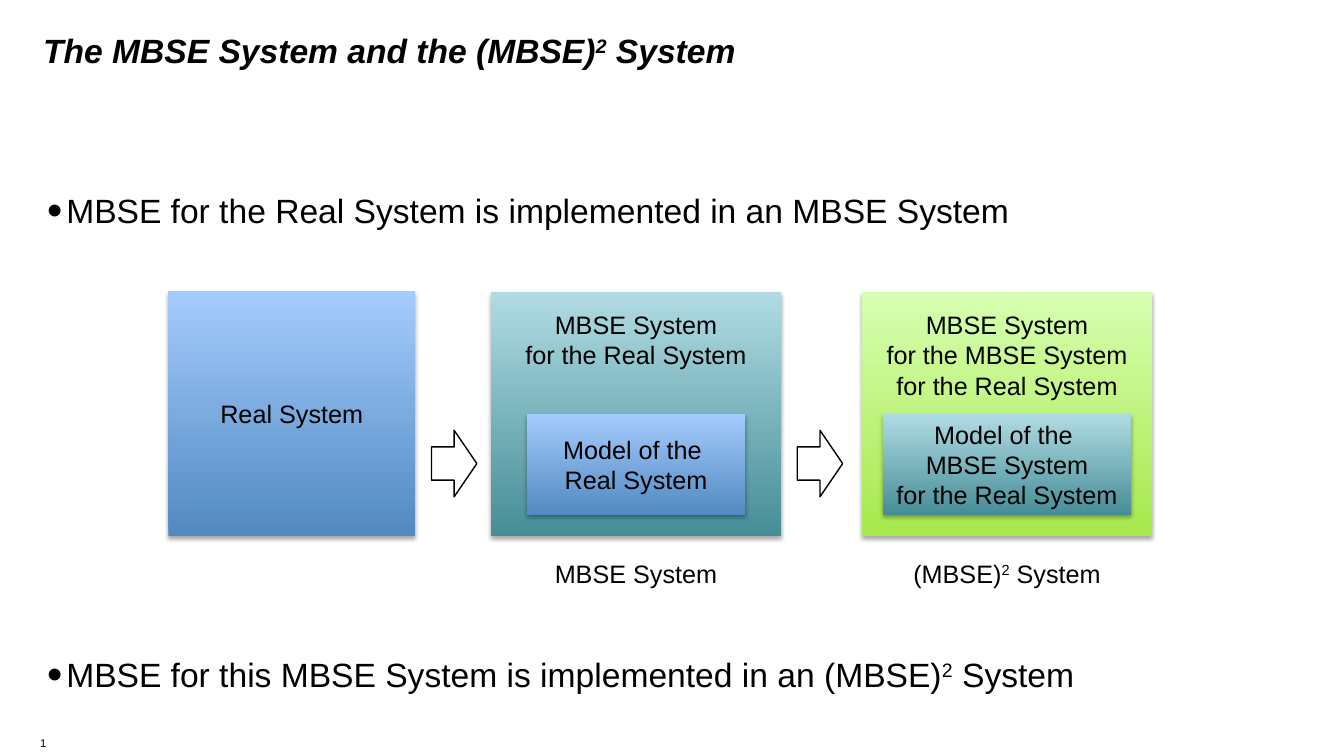
from dataclasses import dataclass

from lxml import etree
from pptx import Presentation
from pptx.dml.color import RGBColor
from pptx.enum.shapes import MSO_SHAPE
from pptx.enum.text import MSO_ANCHOR, PP_ALIGN
from pptx.oxml import parse_xml
from pptx.oxml.ns import nsdecls, qn
from pptx.shapes.autoshape import Shape
from pptx.slide import Slide
from pptx.text.text import TextFrame, _Paragraph
from pptx.util import Pt

RECTANGLE, RIGHT_ARROW = MSO_SHAPE.RECTANGLE, MSO_SHAPE.RIGHT_ARROW
TOP, MIDDLE = MSO_ANCHOR.TOP, MSO_ANCHOR.MIDDLE
LEFT, CENTER = PP_ALIGN.LEFT, PP_ALIGN.CENTER

FONT = "Arial"
COLORS = {
    "black": "000000",
    "white": "FFFFFF",
    "blue dark": "518AC1",
    "blue light": "A5CBFD",
    "teal dark": "468D97",
    "teal light": "B0DBE3",
    "green dark": "A7E84C",
    "green light": "D7FFB1",
}
BOX_BOTTOM = 383
MODEL_TOP, MODEL_HEIGHT = 295.9, 72
ARROW_TOP, ARROW_WIDTH, ARROW_HEIGHT = 307.4, 32.4, 47.5
LABEL_TOP, LABEL_HEIGHT = 395.3, 28.8
HEADING_INSET = 12.2
BULLET_INDENT = 13.7


@dataclass
class SystemBox:
    left: float
    top: float
    width: float
    color: str
    lines: list[str]
    model_width: float = 0
    model_color: str = ""
    model_lines: tuple[str, ...] = ()
    label: str = ""

    @property
    def center(self) -> float:
        return self.left + self.width / 2


SYSTEMS = [
    SystemBox(120.2, 208.1, 176.4, "blue", ["Real System"]),
    SystemBox(350.6, 208.8, 207.4, "teal", ["MBSE System", "for the Real System"],
              156.2, "blue", ("Model of the ", "Real System"), "MBSE System"),
    SystemBox(615.6, 208.8, 207.4, "green",
              ["MBSE System", "for the MBSE System for the Real System"],
              177.1, "teal", ("Model of the ", "MBSE System", "for the Real System"),
              "(MBSE)² System"),
]
ARROW_LEFTS = [308.2, 569.5]
BULLETS = [
    (132, "MBSE for the Real System is implemented in an MBSE System"),
    (463.7, "MBSE for this MBSE System is implemented in an (MBSE)² System"),
]


def color(name: str) -> RGBColor:
    return RGBColor.from_string(COLORS[name])


def write(paragraph: _Paragraph, text: str, size: float, alignment: PP_ALIGN) -> None:
    """Fill a paragraph, setting ² as a raised 2."""
    paragraph.alignment = alignment
    paragraph.font.name = FONT
    paragraph.font.size = Pt(size)
    paragraph.font.color.rgb = color("black")
    before, square, after = text.partition("²")
    paragraph.add_run().text = before
    if square:
        raised = paragraph.add_run()
        raised.text = "2"
        raised._r.get_or_add_rPr().set("baseline", "30000")
        paragraph.add_run().text = after


def write_lines(frame: TextFrame, lines: list[str] | tuple[str, ...], size: float) -> None:
    for index, line in enumerate(lines):
        paragraph = frame.add_paragraph() if index else frame.paragraphs[0]
        write(paragraph, line, size, CENTER)


def add_text_box(slide: Slide, left: float, top: float, width: float,
                 height: float) -> _Paragraph:
    """Add a wrapping text box and return its first paragraph."""
    frame = slide.shapes.add_textbox(Pt(left), Pt(top), Pt(width), Pt(height)).text_frame
    frame.word_wrap = True
    frame.vertical_anchor = TOP
    return frame.paragraphs[0]


def add_bullet(slide: Slide, top: float, text: str) -> None:
    paragraph = add_text_box(slide, 26.6, top, 887.8, 40)
    properties = paragraph._p.get_or_add_pPr()
    properties.set("marL", str(Pt(BULLET_INDENT)))
    properties.set("indent", str(-Pt(BULLET_INDENT)))
    etree.SubElement(properties, qn("a:buSzPct"), val="130000")
    etree.SubElement(properties, qn("a:buFont"), typeface=FONT)
    etree.SubElement(properties, qn("a:buChar"), char="•")
    write(paragraph, text, 24, LEFT)


def add_slide_number(slide: Slide) -> None:
    paragraph = add_text_box(slide, 21.6, 522.7, 72.7, 17.3)
    paragraph._p.append(parse_xml(
        f'<a:fld {nsdecls("a")} id="{{B6F15528-21DE-4FAA-801E-634DDDAF4B2B}}" type="slidenum">'
        f'<a:rPr lang="en-US" sz="800"><a:latin typeface="{FONT}"/></a:rPr>'
        f'<a:t>4</a:t></a:fld>'))


def add_shadow(shape: Shape) -> None:
    effects = shape._element.spPr.find(qn("a:effectLst"))
    shadow = etree.SubElement(effects, qn("a:outerShdw"), blurRad="40000", dist="23000",
                              dir="5400000", rotWithShape="0")
    shade = etree.SubElement(shadow, qn("a:srgbClr"), val=COLORS["black"])
    etree.SubElement(shade, qn("a:alpha"), val="35000")


def add_box(slide: Slide, left: float, top: float, width: float, height: float,
            hue: str, lines: list[str] | tuple[str, ...]) -> Shape:
    """Add a shaded box, dark at the bottom, with centred text."""
    shape = slide.shapes.add_shape(RECTANGLE, Pt(left), Pt(top), Pt(width), Pt(height))
    shape.fill.gradient()
    shape.fill.gradient_angle = 90
    for stop, tone in zip(shape.fill.gradient_stops, ("dark", "light")):
        stop.color.rgb = color(f"{hue} {tone}")
    shape.line.fill.background()
    shape.shadow.inherit = False
    add_shadow(shape)
    shape.text_frame.word_wrap = True
    shape.text_frame.vertical_anchor = MIDDLE
    write_lines(shape.text_frame, lines, 18)
    return shape


def add_system(slide: Slide, system: SystemBox) -> None:
    """Add a system box with the model inside it and the label below, if any."""
    box = add_box(slide, system.left, system.top, system.width,
                  BOX_BOTTOM - system.top, system.color, system.lines)
    if system.model_lines:
        box.text_frame.vertical_anchor = TOP
        box.text_frame.margin_top = Pt(HEADING_INSET)
        add_box(slide, system.center - system.model_width / 2, MODEL_TOP,
                system.model_width, MODEL_HEIGHT, system.model_color, system.model_lines)
    if system.label:
        label = add_text_box(slide, system.left, LABEL_TOP, system.width, LABEL_HEIGHT)
        write(label, system.label, 18, CENTER)


def add_arrow(slide: Slide, left: float) -> None:
    arrow = slide.shapes.add_shape(RIGHT_ARROW, Pt(left), Pt(ARROW_TOP),
                                   Pt(ARROW_WIDTH), Pt(ARROW_HEIGHT))
    arrow.fill.solid()
    arrow.fill.fore_color.rgb = color("white")
    arrow.line.color.rgb = color("black")
    arrow.line.width = Pt(1)
    arrow.shadow.inherit = False


def main() -> None:
    presentation = Presentation()
    presentation.slide_width, presentation.slide_height = Pt(960), Pt(540)
    slide = presentation.slides.add_slide(presentation.slide_layouts[6])

    title = add_text_box(slide, 23.8, 18, 830.2, 46.1)
    write(title, "The MBSE System and the (MBSE)² System", 24, LEFT)
    title.font.bold = title.font.italic = True

    for top, text in BULLETS:
        add_bullet(slide, top, text)
    for system in SYSTEMS:
        add_system(slide, system)
    for left in ARROW_LEFTS:
        add_arrow(slide, left)
    add_slide_number(slide)
    presentation.save("out.pptx")


if __name__ == "__main__":
    main()
